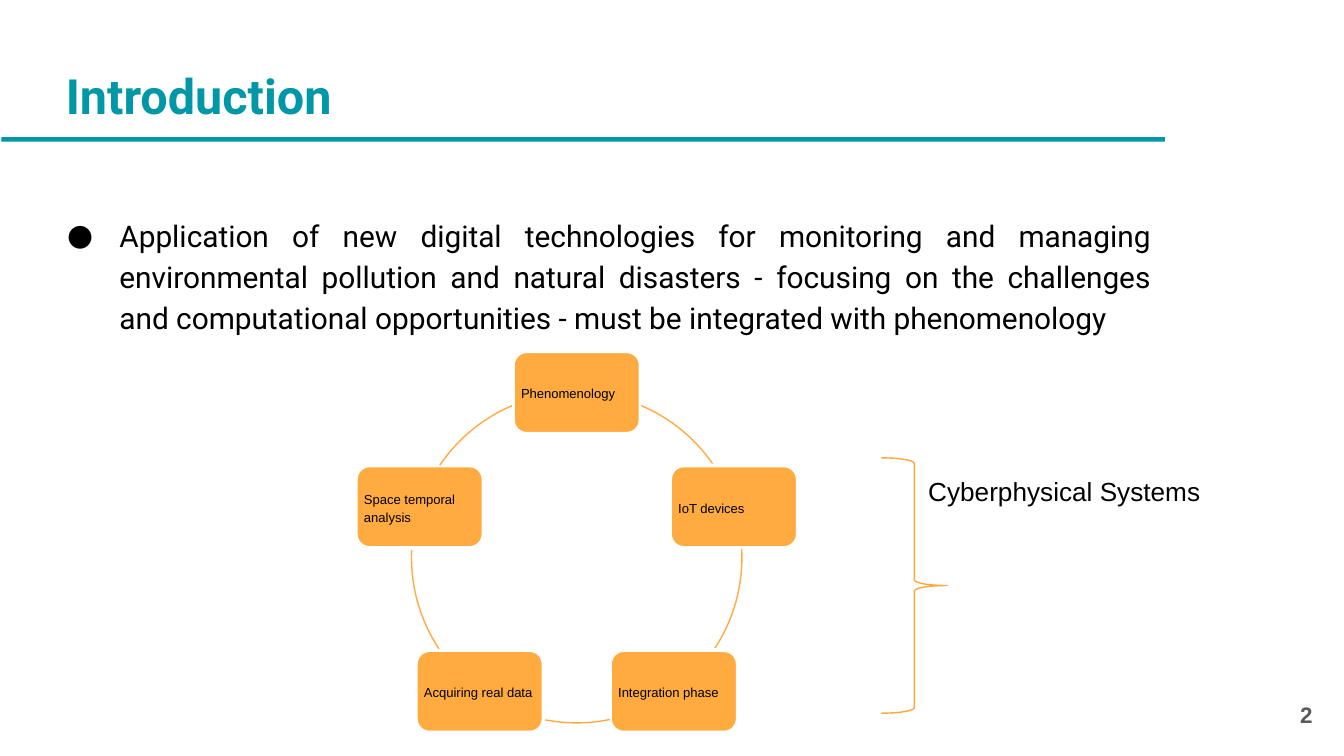
"""Build the introduction slide with its cycle of five cyberphysical stages."""
from math import cos, radians, sin

from lxml.etree import SubElement
from pptx import Presentation
from pptx.dml.color import RGBColor
from pptx.enum.shapes import MSO_SHAPE as SHAPE
from pptx.enum.text import MSO_ANCHOR as ANCHOR, MSO_AUTO_SIZE as AUTO_SIZE, PP_ALIGN as ALIGN
from pptx.oxml.ns import qn
from pptx.util import Pt

TEAL = RGBColor(0x00, 0x97, 0xA7)
ORANGE = RGBColor(0xFF, 0xAB, 0x40)
BRACE_ORANGE = RGBColor(0xFE, 0xA8, 0x3A)
WHITE = RGBColor(0xFF, 0xFF, 0xFF)
BLACK = RGBColor(0x00, 0x00, 0x00)
GRAY = RGBColor(0x59, 0x59, 0x59)
NO_BREAK_SPACE = chr(160)


def add_outline(kind, left, top, width, height, color, weight):
    shape = slide.shapes.add_shape(kind, Pt(left), Pt(top), Pt(width), Pt(height))
    shape.shadow.inherit = False
    shape.fill.background()
    shape.line.color.rgb = color
    shape.line.width = Pt(weight)
    return shape


def style_text(frame, name, size, color, inset_x=7.2, inset_y=7.2, bold=False,
               anchor=ANCHOR.TOP, align=ALIGN.LEFT, spacing=1.15):
    frame.word_wrap = True
    frame.auto_size = AUTO_SIZE.NONE
    frame.vertical_anchor = anchor
    frame.margin_left = frame.margin_right = Pt(inset_x)
    frame.margin_top = frame.margin_bottom = Pt(inset_y)
    paragraph = frame.paragraphs[0]
    paragraph.alignment = align
    paragraph.line_spacing = spacing
    font = paragraph.font
    font.name, font.size, font.bold = name, Pt(size), bold
    font.color.rgb = color


prs = Presentation()
prs.slide_width, prs.slide_height = Pt(720), Pt(405)
slide = prs.slides.add_slide(prs.slide_layouts[5])

title = slide.shapes.title
title.left, title.top, title.width, title.height = Pt(28.1), Pt(23.4), Pt(638.6), Pt(30.2)
title.text_frame.text = "Introduction"
style_text(title.text_frame, "Roboto", 26, TEAL, bold=True)

page_number = slide.shapes.add_textbox(Pt(667.1), Pt(367.2), Pt(43.2), Pt(31))
page_number.text_frame.text = "2"
style_text(page_number.text_frame, "Arial", 12, GRAY, bold=True,
           anchor=ANCHOR.MIDDLE, align=ALIGN.RIGHT, spacing=1)

statement = slide.shapes.add_textbox(Pt(20.9), Pt(106.6), Pt(603), Pt(238.3))
statement.text_frame.text = (
    "Application of new digital technologies for monitoring and managing "
    "environmental pollution and natural disasters - focusing on the challenges "
    f"and{NO_BREAK_SPACE}computational opportunities - must be integrated with phenomenology"
)
bullet_props = statement.text_frame.paragraphs[0]._p.get_or_add_pPr()
bullet_props.set("marL", str(Pt(36)))
bullet_props.set("indent", str(-Pt(28)))
bullet_color = SubElement(bullet_props, qn("a:buClr"))
SubElement(bullet_color, qn("a:srgbClr"), val=str(BLACK))
SubElement(bullet_props, qn("a:buSzPts"), val="1600")
SubElement(bullet_props, qn("a:buFont"), typeface="Roboto")
SubElement(bullet_props, qn("a:buChar"), char="●")
style_text(statement.text_frame, "Roboto", 16, BLACK, align=ALIGN.JUSTIFY)

title_rule = add_outline(SHAPE.RECTANGLE, 0.7, 73.5, 623.3, 2.4, TEAL, 0)
title_rule.fill.solid()
title_rule.fill.fore_color.rgb = TEAL
title_rule.line.fill.background()

CENTER_X, CENTER_Y, RADIUS = 309, 298.8, 88.5
STAGE_WIDTH, STAGE_HEIGHT = 68.4, 44.2
STAGES = [
    ("Phenomenology", 293, 326),
    ("IoT devices", 357, 33.5),
    ("Integration phase", 78.5, 101.5),
    ("Acquiring real data", 146.5, 183),
    ("Space temporal analysis", 214, 247),
]
for index, (label, arc_start, arc_end) in enumerate(STAGES):
    angle = radians(72 * index - 90)
    stage = add_outline(SHAPE.ROUNDED_RECTANGLE,
                        CENTER_X + RADIUS * cos(angle) - STAGE_WIDTH / 2,
                        CENTER_Y + RADIUS * sin(angle) - STAGE_HEIGHT / 2,
                        STAGE_WIDTH, STAGE_HEIGHT, WHITE, 2)
    stage.fill.solid()
    stage.fill.fore_color.rgb = ORANGE
    stage.text_frame.text = label
    style_text(stage.text_frame, "Arial", 7, BLACK, 2.2, 2.2, anchor=ANCHOR.MIDDLE)

    arc = add_outline(SHAPE.ARC, CENTER_X - RADIUS, CENTER_Y - RADIUS,
                      2 * RADIUS, 2 * RADIUS, ORANGE, 0.75)
    arc.adjustments[0] = arc_start * 0.6
    arc.adjustments[1] = arc_end * 0.6

add_outline(SHAPE.RIGHT_BRACE, 472.2, 245.3, 35.3, 136.8, BRACE_ORANGE, 0.75)

systems = slide.shapes.add_textbox(Pt(490.2), Pt(250.9), Pt(216), Pt(24.5))
systems.text_frame.text = "Cyberphysical Systems"
style_text(systems.text_frame, "Arial", 14, BLACK, inset_y=3.6, spacing=1)

prs.save("out.pptx")
